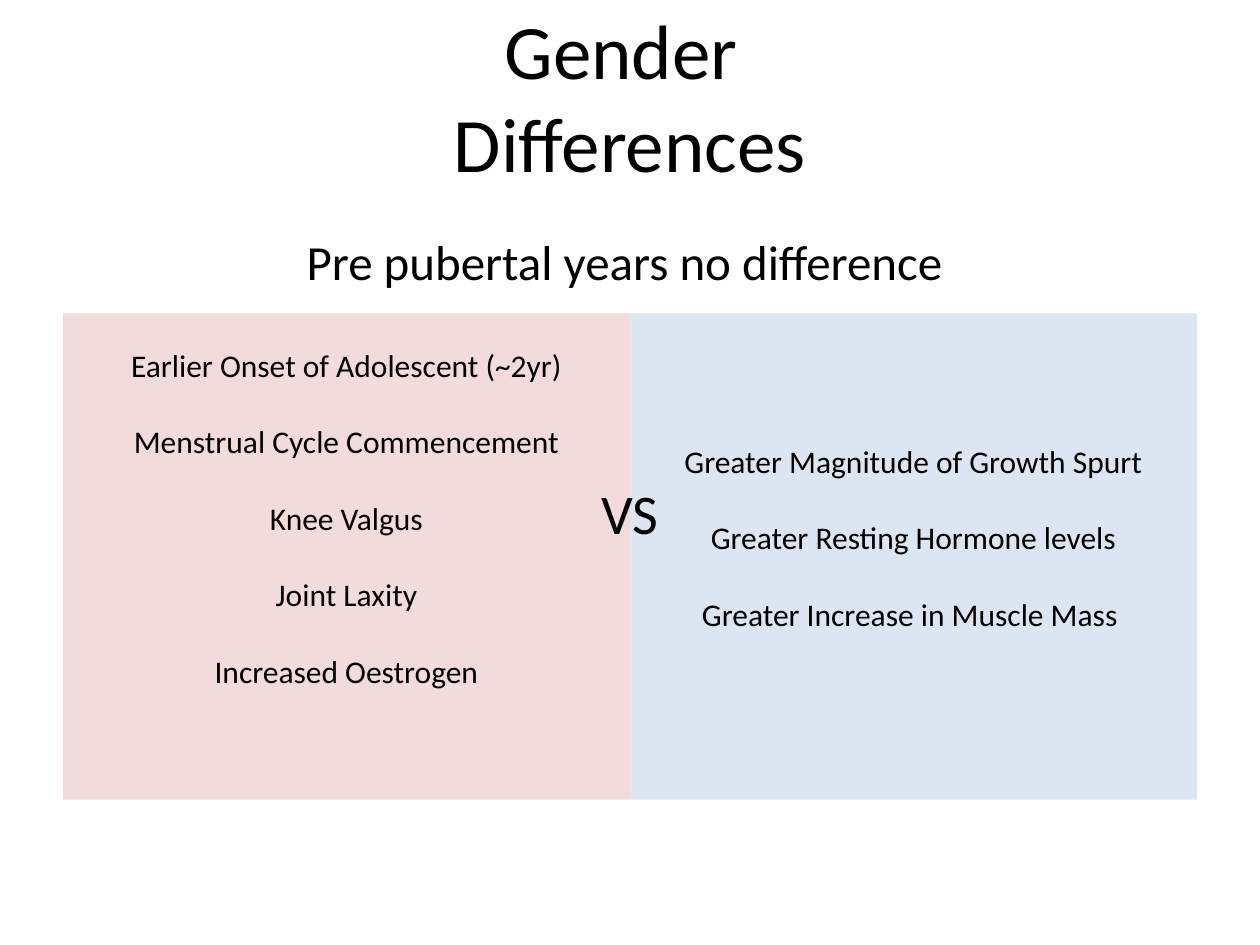
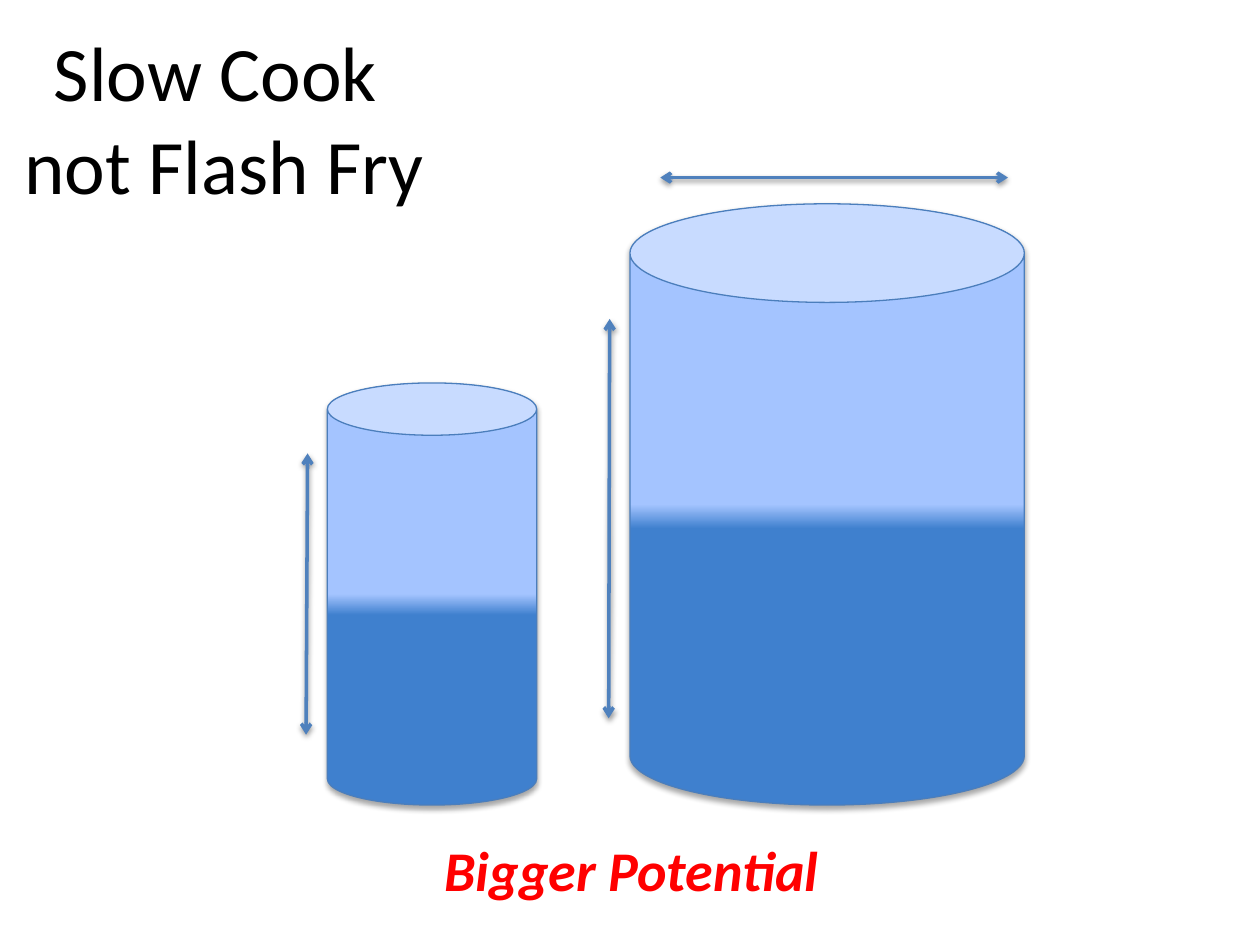
from lxml.etree import SubElement
from pptx import Presentation
from pptx.dml.color import RGBColor
from pptx.enum.shapes import MSO_CONNECTOR, MSO_SHAPE
from pptx.enum.text import MSO_ANCHOR, MSO_AUTO_SIZE, PP_ALIGN
from pptx.oxml.ns import qn
from pptx.util import Cm, Pt

COLOURS = {
    "text": "000000",
    "accent": "FF0000",
    "girls": "F2DCDB",
    "boys": "DCE6F2",
    "water": "3F80CE",
    "glass": "A4C4FF",
    "rim": "4B7EBC",
    "arrow": "4F81BD",
    "shadow": "000000",
}
FONT = "Calibri"

GENDER_TITLE = ["Gender ", "Differences"]
GENDER_TITLE_BOX = (1.27, 0.33, 22.86, 3.18)
PREPUBERTAL = "Pre pubertal years no difference "
PREPUBERTAL_BOX = (1.27, 4.55, 22.86, 1.45)
VERSUS = "VS"
VERSUS_BOX = (11.1, 9.53, 3.2, 1.63)
PANELS = [
    {
        "colour": "girls",
        "points": [
            "Earlier Onset of Adolescent (~2yr)",
            "Menstrual Cycle Commencement",
            "Knee Valgus",
            "Joint Laxity",
            "Increased Oestrogen",
        ],
        "lines_below": 2,
    },
    {
        "colour": "boys",
        "points": [
            "Greater Magnitude of Growth Spurt",
            "Greater Resting Hormone levels",
            "Greater Increase in Muscle Mass ",
        ],
        "lines_below": 1,
    },
]
PANEL_LEFT, PANEL_TOP, PANEL_WIDTH, PANEL_HEIGHT = 1.27, 6.32, 11.43, 9.8
LINE_GAP = 0.78
INSET = 0.13

COOKING_TITLE = ["Slow Cook ", "not Flash Fry"]
COOKING_TITLE_BOX = (-6.91, 0.18, 22.86, 4.37)
POTENTIAL = "Bigger Potential"
POTENTIAL_BOX = (8.71, 16.71, 8.69, 1.63)
CAN_BASE = 16.23
CANS = [
    {"left": 6.6, "width": 4.22, "height": 8.51, "water_level": 0.45},
    {"left": 12.7, "width": 7.95, "height": 12.12, "water_level": 0.46},
]
GLASS_START = 0.5
ARROWS = [
    (6.2, 9.14, 6.17, 14.81),
    (12.29, 6.43, 12.27, 14.48),
    (20.32, 3.58, 13.31, 3.58),
]


def colour(name):
    return RGBColor.from_string(COLOURS[name])


def lengths(values):
    return [Cm(value) for value in values]


def apply_format(target, formats):
    for attribute, value in formats.items():
        setattr(target, attribute, value)


def format_paragraph(paragraph, size, ink="text", align=PP_ALIGN.CENTER, **styles):
    paragraph.alignment = align
    apply_format(paragraph.font, {"name": FONT, "size": Pt(size), **styles})
    paragraph.font.color.rgb = colour(ink)


def add_titled_slide(deck, title_lines, box):
    slide = deck.slides.add_slide(deck.slide_layouts[5])
    title = slide.shapes.title
    apply_format(title, dict(zip(("left", "top", "width", "height"), lengths(box))))
    frame = title.text_frame
    apply_format(frame, {
        "auto_size": MSO_AUTO_SIZE.NONE,
        "vertical_anchor": MSO_ANCHOR.MIDDLE,
        "word_wrap": True,
    })
    heading = frame.paragraphs[0]
    for number, line in enumerate(title_lines):
        if number:
            heading.add_line_break()
        heading.add_run().text = line
    format_paragraph(heading, 44)
    return slide


def add_label(slide, text, box, size, **styles):
    frame = slide.shapes.add_textbox(*lengths(box)).text_frame
    apply_format(frame, {
        "text": text,
        "word_wrap": True,
        "auto_size": MSO_AUTO_SIZE.SHAPE_TO_FIT_TEXT,
    })
    format_paragraph(frame.paragraphs[0], size, **styles)


def add_panel(slide, column, panel):
    box = (PANEL_LEFT + column * PANEL_WIDTH, PANEL_TOP, PANEL_WIDTH, PANEL_HEIGHT)
    side = slide.shapes.add_shape(MSO_SHAPE.RECTANGLE, *lengths(box))
    side.shadow.inherit = False
    side.fill.solid()
    side.fill.fore_color.rgb = colour(panel["colour"])
    side.line.fill.background()
    frame = side.text_frame
    apply_format(frame, {
        "word_wrap": True,
        "vertical_anchor": MSO_ANCHOR.MIDDLE,
        "margin_bottom": Cm(INSET + panel["lines_below"] * LINE_GAP),
    })
    for number, point in enumerate(panel["points"]):
        paragraph = frame.add_paragraph() if number else frame.paragraphs[0]
        paragraph.text = point
        format_paragraph(paragraph, 18)
        if number:
            paragraph.space_before = Cm(LINE_GAP)


def add_shadow(item, opacity, distance):
    effects = SubElement(item._element.spPr, qn("a:effectLst"))
    shadow = SubElement(effects, qn("a:outerShdw"), {
        "blurRad": str(Pt(3.1)),
        "dist": str(Pt(distance)),
        "dir": "5400000",
        "rotWithShape": "0",
    })
    tint = SubElement(shadow, qn("a:srgbClr"), val=COLOURS["shadow"])
    SubElement(tint, qn("a:alpha"), val=str(opacity * 1000))


def set_line(item, name, width):
    item.line.color.rgb = colour(name)
    item.line.width = Pt(width)


def add_can(slide, left, width, height, water_level):
    box = (left, CAN_BASE - height, width, height)
    can = slide.shapes.add_shape(MSO_SHAPE.CAN, *lengths(box))
    can.fill.gradient()
    can.fill.gradient_angle = 90
    levels = [(water_level, "water"), (GLASS_START, "glass")]
    for stop, (position, name) in zip(can.fill.gradient_stops, levels):
        stop.position = position
        stop.color.rgb = colour(name)
    set_line(can, "rim", 0.75)
    add_shadow(can, 35, 1.8)


def add_arrow(slide, ends):
    arrow = slide.shapes.add_connector(MSO_CONNECTOR.STRAIGHT, *lengths(ends))
    set_line(arrow, "arrow", 2)
    for end in ("a:headEnd", "a:tailEnd"):
        SubElement(arrow.line._get_or_add_ln(), qn(end), type="arrow")
    add_shadow(arrow, 38, 1.6)


def build_gender_slide(deck):
    slide = add_titled_slide(deck, GENDER_TITLE, GENDER_TITLE_BOX)
    for column, panel in enumerate(PANELS):
        add_panel(slide, column, panel)
    add_label(slide, VERSUS, VERSUS_BOX, 32)
    add_label(slide, PREPUBERTAL, PREPUBERTAL_BOX, 28)


def build_cooking_slide(deck):
    slide = add_titled_slide(deck, COOKING_TITLE, COOKING_TITLE_BOX)
    for can in CANS:
        add_can(slide, **can)
    for ends in ARROWS:
        add_arrow(slide, ends)
    add_label(slide, POTENTIAL, POTENTIAL_BOX, 32, ink="accent",
              align=PP_ALIGN.LEFT, bold=True, italic=True)


def main():
    deck = Presentation()
    apply_format(deck, {"slide_width": Cm(25.4), "slide_height": Cm(19.05)})
    build_gender_slide(deck)
    build_cooking_slide(deck)
    deck.save("out.pptx")


if __name__ == "__main__":
    main()
